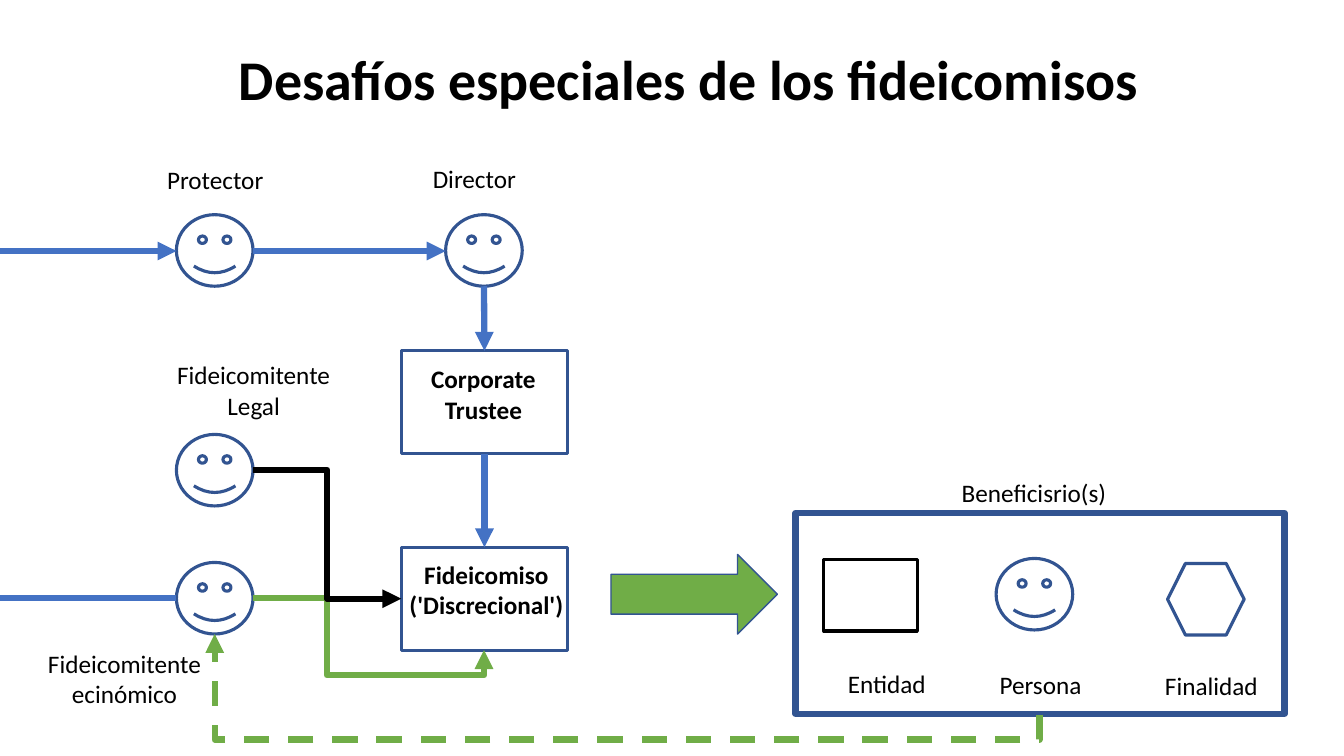
from dataclasses import dataclass

import pptx
import pptx.dml.color
import pptx.enum.dml
import pptx.enum.shapes
import pptx.enum.text
import pptx.oxml
import pptx.oxml.ns
import pptx.util

Inches = pptx.util.Inches
Pt = pptx.util.Pt
Shape = pptx.enum.shapes.MSO_SHAPE
Link = pptx.enum.shapes.MSO_CONNECTOR
Align = pptx.enum.text.PP_ALIGN


@dataclass(frozen=True)
class Theme:
    font: str = "Calibri"
    ink: str = "000000"
    navy: str = "325491"
    blue: str = "4472C4"
    green: str = "70AD47"
    title: int = 40
    body: int = 18
    thin: float = 1
    edge: float = 2.25
    thick: float = 4.5


THEME = Theme()
FACE = (0.76, 0.71)
BOX = (1.65, 1.02)


def rgb(color):
    return pptx.dml.color.RGBColor.from_string(color)


def style(frame, size, bold, align):
    for para in frame.paragraphs:
        para.alignment = align
        for run in para.runs:
            run.font.name = THEME.font
            run.font.size = Pt(size)
            run.font.bold = bold
            run.font.color.rgb = rgb(THEME.ink)


def title(slide, text):
    head = slide.shapes.title
    head.left, head.top = Inches(2.27), Inches(0.39)
    head.width, head.height = Inches(9.23), Inches(0.77)
    frame = head.text_frame
    frame.text = text
    frame.word_wrap = False
    frame.vertical_anchor = pptx.enum.text.MSO_ANCHOR.TOP
    style(frame, THEME.title, True, Align.LEFT)


def label(slide, text, left, top, width=1.85, height=0.4, bold=False):
    box = slide.shapes.add_textbox(
        Inches(left), Inches(top), Inches(width), Inches(height))
    frame = box.text_frame
    frame.word_wrap = width > 1.5
    frame.text = text
    style(frame, THEME.body, bold, Align.CENTER)


def shape(slide, kind, left, top, size, color=THEME.navy, weight=THEME.edge,
          fill=None):
    item = slide.shapes.add_shape(
        kind, Inches(left), Inches(top), Inches(size[0]), Inches(size[1]))
    item.shadow.inherit = False
    if fill:
        item.fill.solid()
        item.fill.fore_color.rgb = rgb(fill)
    else:
        item.fill.background()
    item.line.color.rgb = rgb(color)
    item.line.width = Pt(weight)
    return item


def link(slide, start, end, color, kind=Link.STRAIGHT, arrow=True, dash=False):
    line = slide.shapes.add_connector(
        kind, *(Inches(value) for value in (*start, *end)))
    line.line.color.rgb = rgb(color)
    line.line.width = Pt(THEME.thick)
    if dash:
        line.line.dash_style = pptx.enum.dml.MSO_LINE.DASH
    if arrow:
        tail = pptx.oxml.parse_xml(
            f'<a:tailEnd {pptx.oxml.ns.nsdecls("a")} type="triangle"/>')
        line.line._get_or_add_ln().append(tail)
    line._element.spPr.append(pptx.oxml.parse_xml(
        f'<a:effectLst {pptx.oxml.ns.nsdecls("a")}/>'))
    return line


def bend(line, preset, *shares, turn=0):
    """Set the elbow's preset, its bends as shares of its box, and its turn."""
    props = line._element.spPr
    geom = props.find(pptx.oxml.ns.qn("a:prstGeom"))
    geom.set("prst", preset)
    guides = "".join(
        f'<a:gd name="adj{i}" fmla="val {round(share * 100000)}"/>'
        for i, share in enumerate(shares, 1))
    for old in list(geom):
        geom.remove(old)
    geom.append(pptx.oxml.parse_xml(
        f'<a:avLst {pptx.oxml.ns.nsdecls("a")}>{guides}</a:avLst>'))
    if turn:
        props.find(pptx.oxml.ns.qn("a:xfrm")).set("rot", str(turn * 60000))


def people(slide):
    for left, top in ((1.75, 2.13), (4.42, 2.13), (1.75, 4.31), (1.75, 5.58)):
        shape(slide, Shape.SMILEY_FACE, left, top, FACE)
    label(slide, "Protector", 1.21, 1.58)
    label(slide, "Director", 3.78, 1.57)
    label(slide, "Fideicomitente Legal", 1.59, 3.52, height=0.71)
    label(slide, "Fideicomitente ecinómico", 0.31, 6.38, height=0.71)


def heirs(slide):
    shape(slide, Shape.RECTANGLE, 7.89, 5.09, (4.85, 1.99), weight=THEME.thick)
    shape(slide, Shape.RECTANGLE, 8.17, 5.55, (0.93, 0.71), THEME.ink)
    shape(slide, Shape.SMILEY_FACE, 9.88, 5.54, FACE)
    shape(slide, Shape.HEXAGON, 11.58, 5.59, FACE)
    label(slide, "Beneficisrio(s)", 9.33, 4.69)
    label(slide, "Entidad", 8.3, 6.58, 0.99)
    label(slide, "Persona", 9.81, 6.59, 1.02)
    label(slide, "Finalidad", 11.45, 6.6, 1.13)


def links(slide, firm, trust):
    link(slide, (0, 2.49), (1.75, 2.49), THEME.blue)
    link(slide, (0, 5.93), (1.75, 5.93), THEME.blue, arrow=False)
    link(slide, (2.51, 2.49), (4.42, 2.49), THEME.blue)
    down = link(slide, (4.8, 2.84), (4.8, 3.48), THEME.blue)
    down.end_connect(firm, 0)
    down = link(slide, (4.8, 4.5), (4.8, 5.43), THEME.blue)
    down.begin_connect(firm, 2)
    down.end_connect(trust, 0)

    pay = link(slide, (2.51, 5.93), (4.8, 6.45), THEME.green, Link.ELBOW)
    bend(pay, "bentConnector4", 0.32, 1.48)
    law = link(slide, (2.51, 4.66), (3.98, 5.94), THEME.ink, Link.ELBOW)
    bend(law, "bentConnector3", 0.5)
    back = link(slide, (6.62, 2.6), (5.82, 10.78), THEME.green, Link.ELBOW,
                dash=True)
    bend(back, "bentConnector3", -0.31, turn=90)


def main():
    deck = pptx.Presentation()
    deck.slide_width, deck.slide_height = Inches(13.33), Inches(7.5)
    slide = deck.slides.add_slide(deck.slide_layouts[5])
    title(slide, "Desafíos especiales de los fideicomisos")
    firm = shape(slide, Shape.RECTANGLE, 3.98, 3.48, BOX)
    trust = shape(slide, Shape.RECTANGLE, 3.98, 5.43, BOX)
    label(slide, "Corporate Trustee", 3.88, 3.56, 1.83, 0.71, True)
    label(slide, "Fideicomiso ('Discrecional')", 3.91, 5.5, 1.83, 0.71, True)
    shape(slide, Shape.RIGHT_ARROW, 6.06, 5.5, (1.65, 0.79),
          weight=THEME.thin, fill=THEME.green)
    people(slide)
    heirs(slide)
    links(slide, firm, trust)
    deck.save("out.pptx")


if __name__ == "__main__":
    main()
